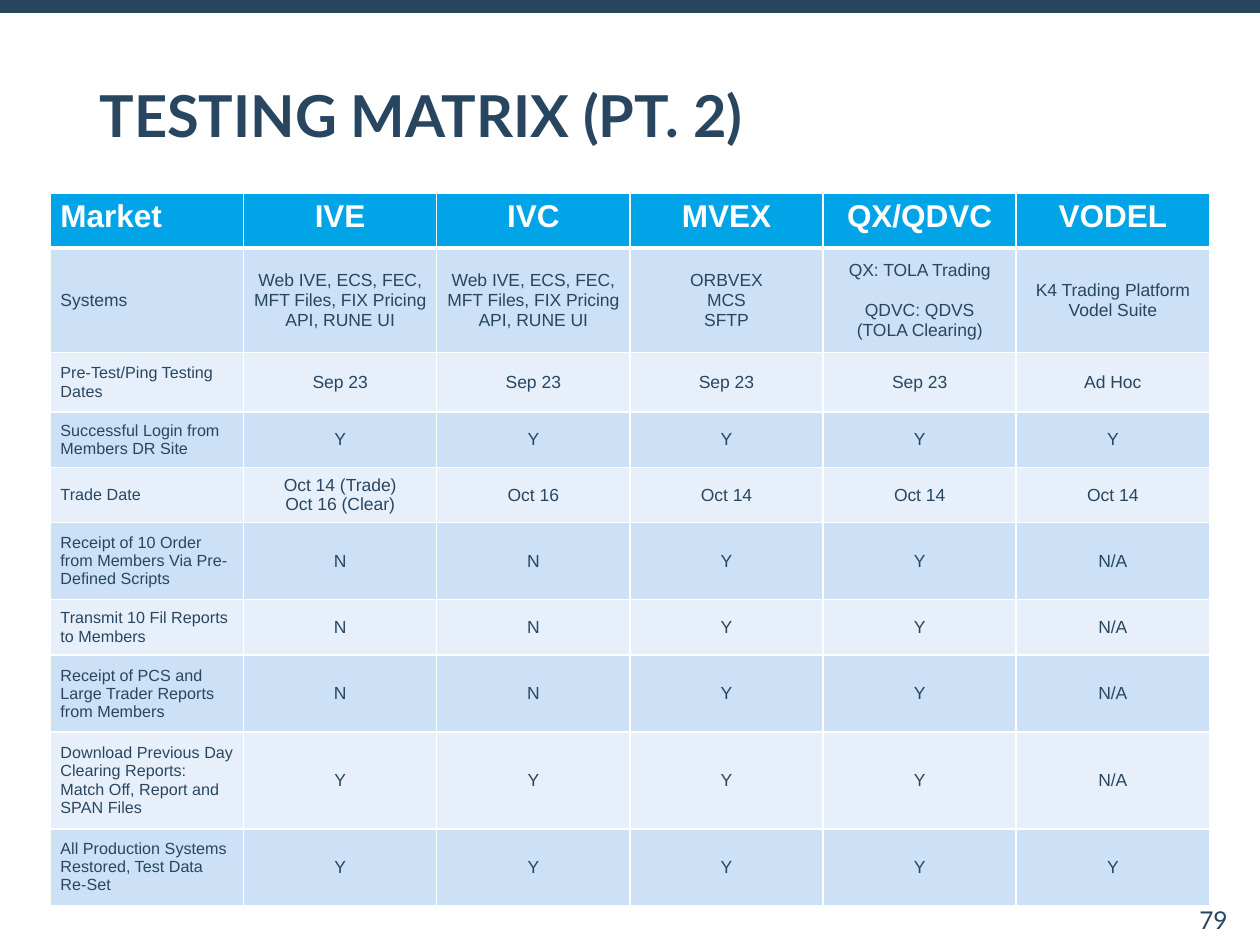
import dataclasses

import pptx
import pptx.dml.color
import pptx.enum.shapes
import pptx.enum.text
import pptx.oxml
import pptx.oxml.ns
import pptx.util

Inches = pptx.util.Inches
Pt = pptx.util.Pt
Anchor = pptx.enum.text.MSO_ANCHOR
Align = pptx.enum.text.PP_ALIGN


@dataclasses.dataclass(frozen=True)
class Theme:
    navy: str = "294661"
    blue: str = "00A4E7"
    dark_band: str = "CCE0F6"
    light_band: str = "E7F0FA"
    white: str = "FFFFFF"
    heading_font: str = "Lato"
    table_font: str = "Arial"
    title_size: float = 33
    number_size: float = 14
    header_size: float = 18
    body_size: float = 10
    label_size: float = 9.2
    bar_width: float = 7.75


THEME = Theme()

HEADER = ["Market", "IVE", "IVC", "MVEX", "QX/QDVC", "VODEL"]
WEB_SYSTEMS = "Web IVE, ECS, FEC, MFT Files, FIX Pricing API, RUNE UI"
SYSTEMS = [
    "Systems", WEB_SYSTEMS, WEB_SYSTEMS, "ORBVEX\vMCS\nSFTP",
    "QX: TOLA Trading\nQDVC: QDVS\n(TOLA Clearing)",
    "K4 Trading Platform\nNodel Suite".replace("Nodel", "Vodel"),
]
CHECKS = [
    ["Pre-Test/Ping Testing Dates"] + ["Sep 23"] * 4 + ["Ad Hoc"],
    ["Successful Login from Members DR Site"] + ["Y"] * 5,
    ["Trade Date", "Oct 14 (Trade)\vOct 16 (Clear)", "Oct 16"] + ["Oct 14"] * 3,
    ["Receipt of 10 Order from Members Via Pre-Defined Scripts", "N", "N", "Y", "Y", "N/A"],
    ["Transmit 10 Fil Reports to Members", "N", "N", "Y", "Y", "N/A"],
    ["Receipt of PCS and Large Trader Reports from Members", "N", "N", "Y", "Y", "N/A"],
    ["Download Previous Day Clearing Reports: Match Off, Report and SPAN Files"]
    + ["Y"] * 4 + ["N/A"],
    ["All Production Systems Restored, Test Data Re-Set"] + ["Y"] * 5,
]
MATRIX = [HEADER, SYSTEMS] + CHECKS
ROW_HEIGHTS = [0.44, 0.83, 0.47, 0.44, 0.44, 0.61, 0.44, 0.61, 0.77, 0.61]


def rgb(color):
    return pptx.dml.color.RGBColor.from_string(color)


def style_text(frame, font, size, color, bold=False, align=Align.LEFT):
    for para in frame.paragraphs:
        para.alignment = align
        for span in para.runs:
            span.font.name = font
            span.font.size = Pt(size)
            span.font.bold = bold
            span.font.color.rgb = rgb(color)


def add_top_bar(page, left, top, width):
    bar = page.shapes.add_connector(
        pptx.enum.shapes.MSO_CONNECTOR.STRAIGHT,
        Inches(left), Inches(top), Inches(left + width), Inches(top))
    bar.line.color.rgb = rgb(THEME.navy)
    bar.line.width = Pt(THEME.bar_width)
    bar._element.spPr.append(pptx.oxml.parse_xml(
        f'<a:effectLst {pptx.oxml.ns.nsdecls("a")}/>'))


def add_heading(page, left, top, width, height, text, size, bold=False):
    box = page.shapes.add_textbox(Inches(left), Inches(top), Inches(width), Inches(height))
    frame = box.text_frame
    frame.word_wrap = True
    frame.vertical_anchor = Anchor.MIDDLE
    frame.text = text
    frame.paragraphs[0].line_spacing = 0.9 if bold else 1.0
    style_text(frame, THEME.heading_font, size, THEME.navy, bold)


def set_borders(cell, bottom_width):
    properties = cell._tc.get_or_add_tcPr()
    widths = {"lnL": 1, "lnR": 1, "lnT": 1, "lnB": bottom_width}
    for position, (side, width) in enumerate(widths.items()):
        properties.insert(position, pptx.oxml.parse_xml(
            f'<a:{side} {pptx.oxml.ns.nsdecls("a")} w="{Pt(width)}">'
            f'<a:solidFill><a:srgbClr val="{THEME.white}"/></a:solidFill></a:{side}>'))


def fill_cell(cell, text, row, column):
    is_header = row == 0
    if is_header:
        fill, size = THEME.blue, THEME.header_size
    else:
        fill = THEME.dark_band if row % 2 else THEME.light_band
        size = THEME.label_size if column == 0 and row > 1 else THEME.body_size
    cell.fill.solid()
    cell.fill.fore_color.rgb = rgb(fill)
    cell.margin_left = cell.margin_right = Inches(0.08)
    cell.vertical_anchor = Anchor.TOP if is_header else Anchor.MIDDLE
    cell.text_frame.text = text
    style_text(cell.text_frame, THEME.table_font, size,
               THEME.white if is_header else THEME.navy, is_header,
               Align.CENTER if column else Align.LEFT)
    set_borders(cell, 3 if is_header else 1)


def add_matrix(page, left, top, width):
    table = page.shapes.add_table(
        len(MATRIX), len(HEADER), Inches(left), Inches(top),
        Inches(width), Inches(sum(ROW_HEIGHTS))).table
    for column in table.columns:
        column.width = Inches(width / len(HEADER))
    for row, (height, texts) in enumerate(zip(ROW_HEIGHTS, MATRIX)):
        table.rows[row].height = Inches(height)
        for column, text in enumerate(texts):
            fill_cell(table.cell(row, column), text, row, column)
    clearing_para = table.cell(1, 4).text_frame.paragraphs[1]
    clearing_para.space_before = Pt(11.5)


def main():
    deck = pptx.Presentation()
    deck.slide_width, deck.slide_height = Inches(10), Inches(7.5)
    page = deck.slides.add_slide(deck.slide_layouts[6])
    add_top_bar(page, 0, 0.05, 10)
    add_heading(page, 9.42, 7.13, 0.57, 0.34, "79", THEME.number_size)
    add_heading(page, 0.69, 0.22, 8.62, 1.45, "TESTING MATRIX (PT. 2)",
                THEME.title_size, bold=True)
    add_matrix(page, 0.4, 1.53, 9.2)
    deck.save("out.pptx")


if __name__ == "__main__":
    main()
